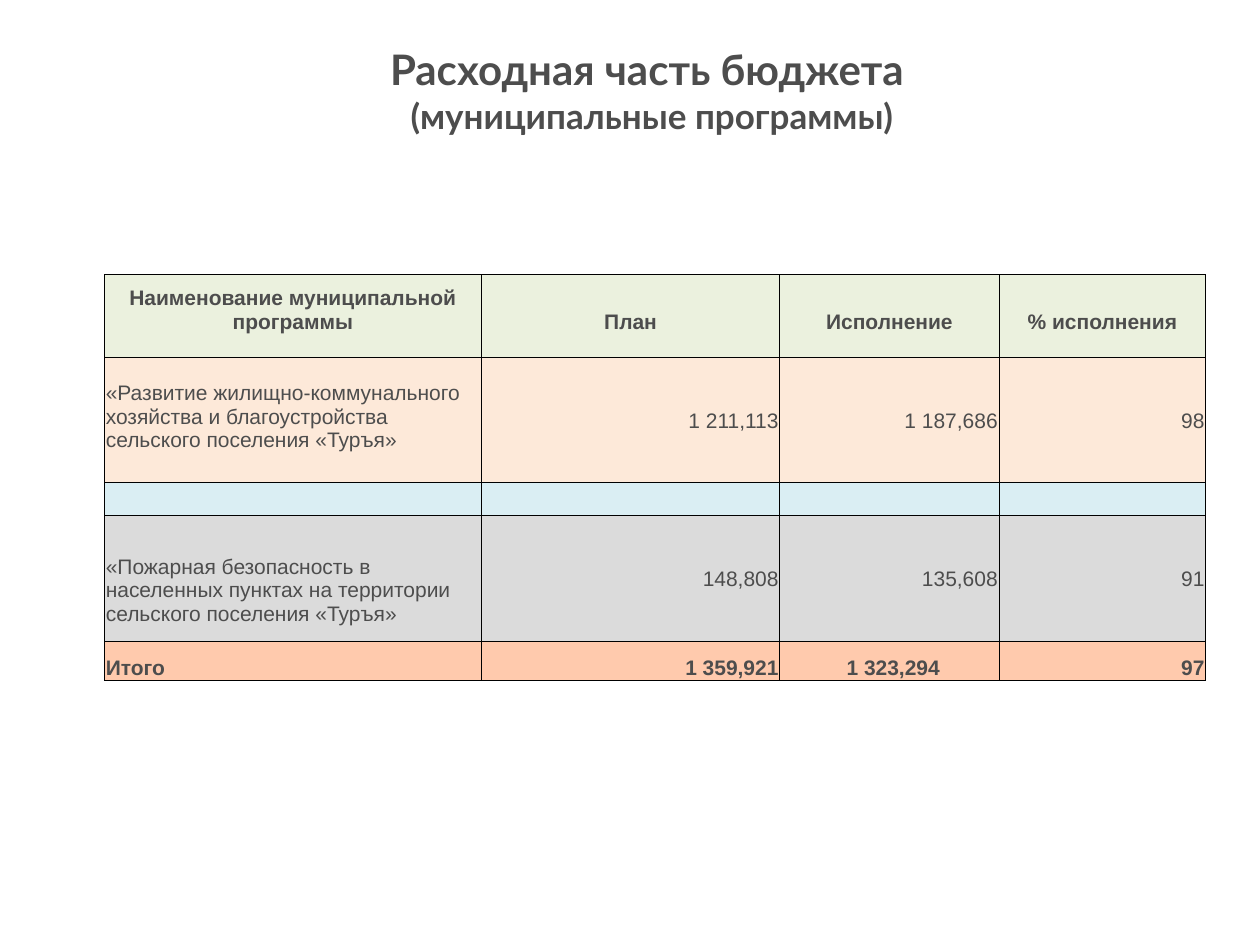
import pptx
import pptx.util
import pptx.dml.color
import pptx.enum.text
import pptx.oxml
import pptx.oxml.ns

Pt = pptx.util.Pt
ALIGN = pptx.enum.text.PP_ALIGN
ANCHOR = pptx.enum.text.MSO_ANCHOR
COLORS = {
    "text": "4D4D4D", "line": "000000", "head": "EBF1DE", "peach": "FDE9D9",
    "blue": "DAEEF3", "gray": "DBDBDB", "total": "FFCAAD",
}
COLS, ROWS = 100, 75
LINE = 1.9


class Page:
    def __init__(self, deck):
        self.deck = deck
        self.slide = deck.slides.add_slide(deck.slide_layouts[5])

    def x(self, cols):
        return int(self.deck.slide_width * cols / COLS)

    def y(self, rows):
        return int(self.deck.slide_height * rows / ROWS)

    def color(self, name):
        return pptx.dml.color.RGBColor.from_string(COLORS[name])

    def style(self, font, face, size, bold):
        font.name, font.size, font.bold = face, Pt(size), bold
        font.color.rgb = self.color("text")

    def title(self, left, top, width, height, lines):
        shape = self.slide.shapes.title
        shape.left, shape.top = self.x(left), self.y(top)
        shape.width, shape.height = self.x(width), self.y(height)
        frame = shape.text_frame
        frame.auto_size = pptx.enum.text.MSO_AUTO_SIZE.NONE
        frame.vertical_anchor = ANCHOR.MIDDLE
        para = frame.paragraphs[0]
        para.alignment = ALIGN.CENTER
        for i, (text, size) in enumerate(lines):
            if i:
                para.add_line_break()
            run = para.add_run()
            run.text = text
            self.style(run.font, "Lato", size, True)

    def border(self, cell):
        props = cell._tc.get_or_add_tcPr()
        for i, side in enumerate("LRTB"):
            props.insert(i, pptx.oxml.parse_xml(
                f'<a:ln{side} {pptx.oxml.ns.nsdecls("a")} w="{Pt(0.5)}"><a:solidFill>'
                f'<a:srgbClr val="{COLORS["line"]}"/></a:solidFill></a:ln{side}>'))

    def cell(self, cell, text, fill, align, anchor, bold, top=0.1, right=0.1, bottom=0):
        cell.fill.solid()
        cell.fill.fore_color.rgb = self.color(fill)
        cell.margin_left, cell.margin_right = self.x(0.1), self.x(right)
        cell.margin_top, cell.margin_bottom = self.y(top), self.y(bottom)
        cell.vertical_anchor = anchor
        para = cell.text_frame.paragraphs[0]
        para.text = text
        para.alignment = align
        self.style(para.font, "Arial", 12, bold)
        self.border(cell)

    def table(self, left, top, widths, heights):
        frame = self.slide.shapes.add_table(
            len(heights), len(widths), self.x(left), self.y(top),
            self.x(sum(widths)), self.y(sum(heights)))
        table = frame.table
        for col, width in zip(table.columns, widths):
            col.width = self.x(width)
        for row, height in zip(table.rows, heights):
            row.height = self.y(height)
        return table


def main():
    deck = pptx.Presentation()
    deck.slide_width, deck.slide_height = pptx.util.Inches(10), pptx.util.Inches(7.5)
    page = Page(deck)
    page.title(13, 4.4, 77.5, 5.5, [
        ("Расходная часть бюджета ", 24), ("(муниципальные программы)", 20)])

    data = [
        ("head", ANCHOR.BOTTOM, True,
         ["Наименование муниципальной программы", "План", "Исполнение", "% исполнения"]),
        ("peach", ANCHOR.MIDDLE, False,
         ["«Развитие жилищно-коммунального хозяйства и благоустройства "
          "сельского поселения «Туръя»", "1 211,113", "1 187,686", "98"]),
        ("blue", ANCHOR.MIDDLE, False, [""] * 4),
        ("gray", ANCHOR.MIDDLE, False,
         ["«Пожарная безопасность в населенных пунктах на территории "
          "сельского поселения «Туръя»", "148,808", "135,608", "91"]),
        ("total", ANCHOR.BOTTOM, True, ["Итого", "1 359,921", "1 323,294", "97"]),
    ]
    table = page.table(8.3, 21.8, [29.9, 23.7, 17.4, 16.4], [6.6, 9.9, 2.6, 10, 3.1])
    for r, (fill, anchor, bold, texts) in enumerate(data):
        for c, text in enumerate(texts):
            align = ALIGN.RIGHT if c else ALIGN.LEFT
            spot, pad = anchor, {}
            if fill == "head":
                align, pad = ALIGN.CENTER, {"bottom": LINE}
            elif c == 0 and fill in ("peach", "gray"):
                pad = {"top": LINE}
                spot = ANCHOR.TOP if fill == "peach" else anchor
            elif c == 2 and fill == "total":
                pad = {"right": 4.7}
            page.cell(table.cell(r, c), text, fill, align, spot, bold, **pad)
    deck.save("out.pptx")


if __name__ == "__main__":
    main()
